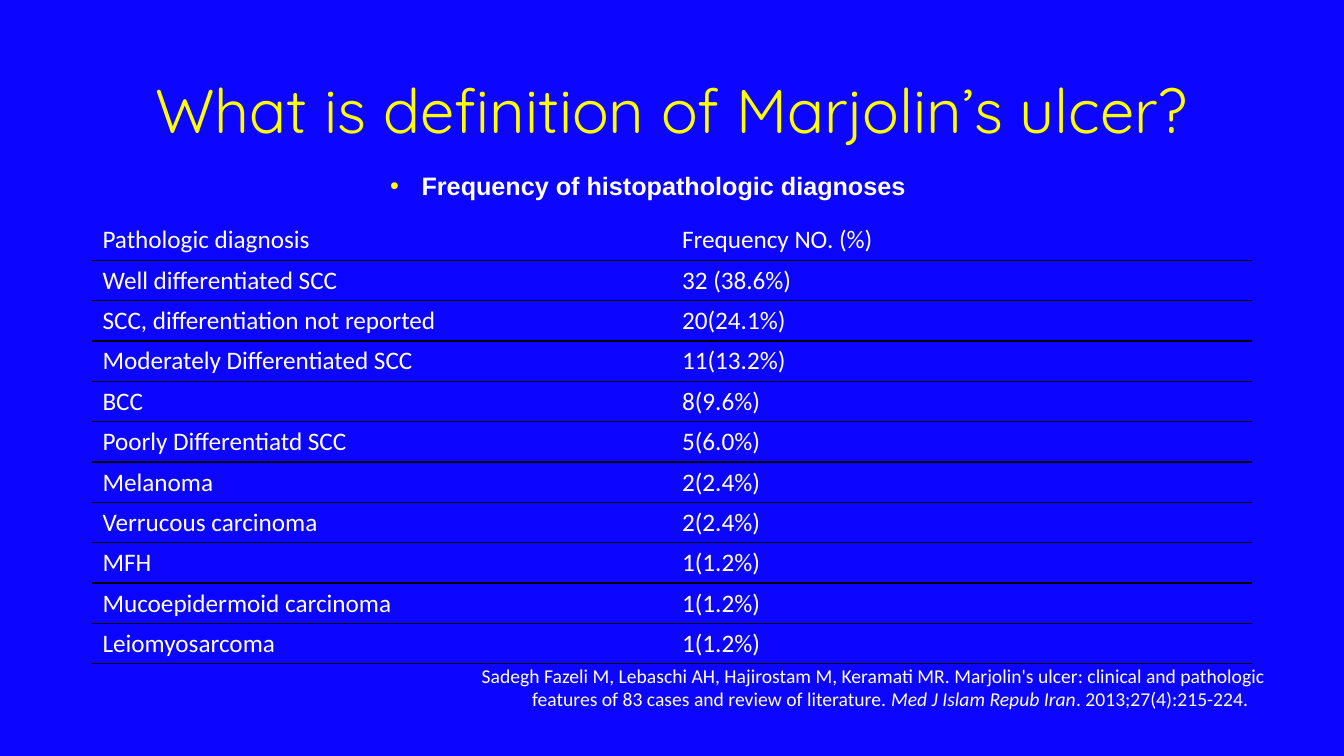
from lxml import etree
from pptx import Presentation
from pptx import util as u
from pptx.dml import color
from pptx.enum import text
from pptx.oxml import ns

COLORS = {"background": "0C05FF", "title": "FFFF00", "text": "FFFFFF", "rule": "000000"}

FORMATS = {
    "title": {"name": "Quicksand", "size": u.Pt(44), "bold": False},
    "subtitle": {"name": "Arial", "size": u.Pt(18), "bold": True},
    "table": {"name": "Calibri", "size": u.Pt(18), "bold": False},
    "citation": {"name": "Calibri", "size": u.Pt(14), "bold": False},
}

DIAGNOSES = [
    ("Pathologic diagnosis", "Frequency NO. (%)"),
    ("Well differentiated SCC", "32 (38.6%)"),
    ("SCC, differentiation not reported", "20(24.1%)"),
    ("Moderately Differentiated SCC", "11(13.2%)"),
    ("BCC", "8(9.6%)"),
    ("Poorly Differentiatd SCC", "5(6.0%)"),
    ("Melanoma", "2(2.4%)"),
    ("Verrucous carcinoma", "2(2.4%)"),
    ("MFH", "1(1.2%)"),
    ("Mucoepidermoid carcinoma", "1(1.2%)"),
    ("Leiomyosarcoma", "1(1.2%)"),
]

CITATION = [
    ("Sadegh Fazeli M, Lebaschi AH, Hajirostam M, Keramati MR. Marjolin's ulcer: "
     "clinical and pathologic features of 83 cases and review of literature. ", False),
    ("Med J Islam Repub Iran", True),
    (". 2013;27(4):215-224.", False),
]


def add_run(paragraph, content, style, ink="text"):
    run = paragraph.add_run()
    run.text = content
    for attribute, value in FORMATS[style].items():
        setattr(run.font, attribute, value)
    run.font.color.rgb = color.RGBColor.from_string(COLORS[ink])
    return run


def place(shape, left, top, width, height):
    shape.left, shape.top = u.Cm(left), u.Cm(top)
    shape.width, shape.height = u.Cm(width), u.Cm(height)


# Slide and background
presentation = Presentation()
presentation.slide_width, presentation.slide_height = u.Cm(33.87), u.Cm(19.05)
slide = presentation.slides.add_slide(presentation.slide_layouts[1])
slide.background.fill.solid()
slide.background.fill.fore_color.rgb = color.RGBColor.from_string(COLORS["background"])

# Title
title = slide.shapes.title
place(title, 2.33, 1.01, 29.21, 3.68)
title.text_frame.vertical_anchor = text.MSO_ANCHOR.MIDDLE
title.text_frame.auto_size = text.MSO_AUTO_SIZE.NONE
paragraph = title.text_frame.paragraphs[0]
paragraph.alignment = text.PP_ALIGN.CENTER
paragraph.line_spacing = 0.9
add_run(paragraph, "What is definition of Marjolin’s ulcer?", "title", "title")

# Citation with a hanging indent
citation = slide.shapes.add_textbox(0, 0, 0, 0)
place(citation, 11.89, 16.6, 21.31, 1.45)
citation.text_frame.word_wrap = True
paragraph = citation.text_frame.paragraphs[0]
properties = paragraph._p.get_or_add_pPr()
properties.set("marL", str(u.Cm(1.27)))
properties.set("indent", str(u.Cm(-1.27)))
for content, italic in CITATION:
    add_run(paragraph, content, "citation").font.italic = italic

# Bulleted subtitle
subtitle = slide.placeholders[1]
place(subtitle, 9.58, 4.17, 13.64, 1.02)
frame = subtitle.text_frame
frame.vertical_anchor = text.MSO_ANCHOR.MIDDLE
frame.auto_size = text.MSO_AUTO_SIZE.NONE
frame.word_wrap = False
paragraph = frame.paragraphs[0]
paragraph.alignment = text.PP_ALIGN.LEFT
paragraph.space_before = u.Pt(0)
properties = paragraph._p.get_or_add_pPr()
properties.set("marL", str(u.Cm(0.79)))
properties.set("indent", str(u.Cm(-0.79)))
bullet_color = etree.SubElement(properties, ns.qn("a:buClr"))
etree.SubElement(bullet_color, ns.qn("a:srgbClr"), val=COLORS["title"])
etree.SubElement(properties, ns.qn("a:buFont"), typeface="Arial")
etree.SubElement(properties, ns.qn("a:buChar"), char="•")
add_run(paragraph, "Frequency of histopathologic diagnoses", "subtitle")

# Table of diagnoses, ruled below each row
table = slide.shapes.add_table(
    len(DIAGNOSES), 2, u.Cm(2.33), u.Cm(5.54), u.Cm(29.21), u.Cm(11.18)).table
table.first_row = table.horz_banding = False
for row_index, row in enumerate(DIAGNOSES):
    for column_index, content in enumerate(row):
        cell = table.cell(row_index, column_index)
        cell.fill.background()
        add_run(cell.text_frame.paragraphs[0], content, "table")
        cell_properties = cell._tc.get_or_add_tcPr()
        ruled = {"lnL": False, "lnR": False, "lnT": row_index > 0, "lnB": True}
        for position, (side, visible) in enumerate(ruled.items()):
            border = etree.Element(ns.qn("a:" + side), w=str(u.Pt(1)))
            if visible:
                fill = etree.SubElement(border, ns.qn("a:solidFill"))
                etree.SubElement(fill, ns.qn("a:srgbClr"), val=COLORS["rule"])
            else:
                etree.SubElement(border, ns.qn("a:noFill"))
            cell_properties.insert(position, border)

presentation.save("out.pptx")
